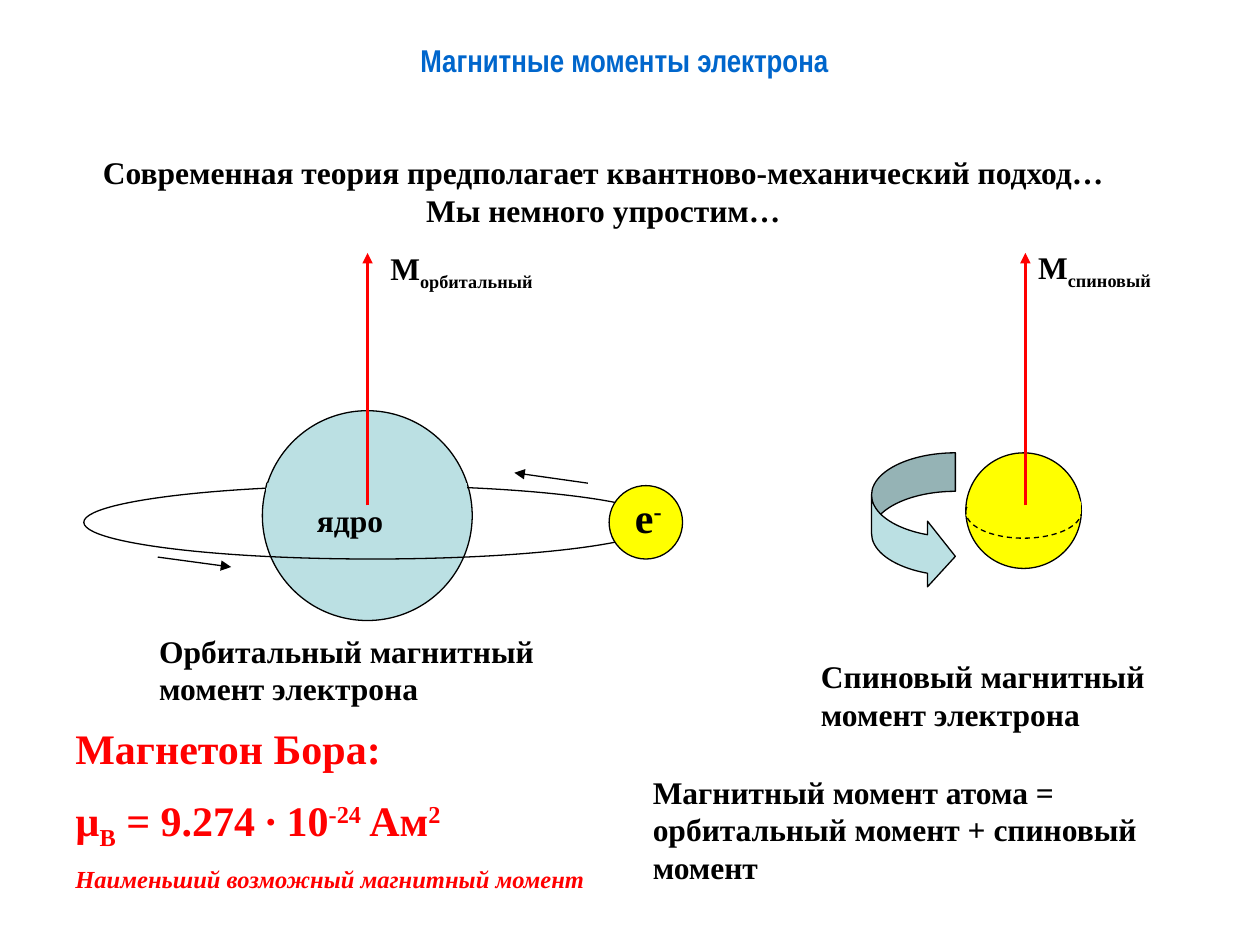
from dataclasses import dataclass
from functools import singledispatch

import pptx
import pptx.dml.color
import pptx.enum.dml
import pptx.enum.shapes
import pptx.enum.text
import pptx.oxml.ns
import pptx.oxml.xmlchemy
import pptx.util
from lxml import etree

Cm = pptx.util.Cm
Pt = pptx.util.Pt
SHAPE = pptx.enum.shapes.MSO_SHAPE
ALIGN = pptx.enum.text.PP_ALIGN
qn = pptx.oxml.ns.qn

BLACK, RED, BLUE = "000000", "FF0000", "0066CC"
YELLOW, PALE = "FFFF00", "BBE0E3"
SUB, SUP = -25, 30
THIN, THICK = 0.75, 1.5


@dataclass
class Run:
    text: str
    base: int = 0


@dataclass
class Para:
    runs: list[Run]
    size: float = 18
    italic: bool = False
    before: float = 0


@dataclass
class Label:
    box: tuple[float, float, float, float]
    paras: list[Para]
    color: str = BLACK
    font: str = "Times New Roman"
    align: ALIGN = ALIGN.LEFT


@dataclass
class Figure:
    box: tuple[float, float, float, float]
    fill: str | None = None
    kind: SHAPE = SHAPE.OVAL
    line: str = BLACK
    dashed: bool = False
    adj: tuple[float, ...] = ()


@dataclass
class Patch:
    points: list[tuple[float, float]]
    fill: str


@dataclass
class Line:
    start: tuple[float, float]
    end: tuple[float, float]
    color: str = BLACK
    width: float = THIN
    arrow: bool = True


def rgb(value: str) -> pptx.dml.color.RGBColor:
    return pptx.dml.color.RGBColor.from_string(value)


def plain(text: str, box: tuple[float, float, float, float], **style) -> Label:
    return Label(box, [Para([Run(text)])], **style)


def moment(name: str, left: float, top: float) -> Label:
    return Label((left, top, 3.81, 1.02), [Para([Run("M"), Run(name, SUB)])])


def axis(x: float) -> Line:
    return Line((x, 10.19), (x, 5.1), RED, THICK)


@singledispatch
def draw(item, s) -> None:
    raise TypeError(item)


@draw.register
def draw_label(item: Label, s) -> None:
    tf = s.shapes.add_textbox(*map(Cm, item.box)).text_frame
    tf.word_wrap = True
    for i, para in enumerate(item.paras):
        p = tf.paragraphs[0] if i == 0 else tf.add_paragraph()
        p.alignment = item.align
        if para.before:
            p.space_before = Pt(para.before)
        p.text = para.runs[0].text
        for run in para.runs[1:]:
            p.add_run().text = run.text
        for r, run in zip(p.runs, para.runs):
            r.font.name = item.font
            r.font.size = Pt(para.size)
            r.font.bold = True
            r.font.italic = para.italic
            r.font.color.rgb = rgb(item.color)
            if run.base:
                r.font._element.set("baseline", str(run.base * 1000))


@draw.register
def draw_figure(item: Figure, s) -> None:
    sp = s.shapes.add_shape(item.kind, *map(Cm, item.box))
    sp.shadow.inherit = False
    for i, value in enumerate(item.adj):
        sp.adjustments[i] = value
    if item.fill:
        sp.fill.solid()
        sp.fill.fore_color.rgb = rgb(item.fill)
    else:
        sp.fill.background()
    sp.line.color.rgb = rgb(item.line)
    sp.line.width = Pt(THIN)
    if item.dashed:
        sp.line.dash_style = pptx.enum.dml.MSO_LINE.DASH


@draw.register
def draw_patch(item: Patch, s) -> None:
    points = [(Cm(x), Cm(y)) for x, y in item.points]
    builder = s.shapes.build_freeform(*points[0])
    builder.add_line_segments(points[1:], close=True)
    sp = builder.convert_to_shape()
    sp.shadow.inherit = False
    sp.fill.solid()
    sp.fill.fore_color.rgb = rgb(item.fill)
    sp.line.fill.background()


@draw.register
def draw_line(item: Line, s) -> None:
    straight = pptx.enum.shapes.MSO_CONNECTOR.STRAIGHT
    ends = map(Cm, item.start + item.end)
    cxn = s.shapes.add_connector(straight, *ends)
    cxn.line.color.rgb = rgb(item.color)
    cxn.line.width = Pt(item.width)
    if item.arrow:
        etree.SubElement(cxn.line._get_or_add_ln(), qn("a:tailEnd"), type="triangle")
    etree.SubElement(cxn._element.spPr, qn("a:effectLst"))


ITEMS = [
    plain("Современная теория предполагает квантново-механический подход… "
          "Мы немного упростим…", (1.27, 2.97, 21.79, 1.8), align=ALIGN.CENTER),
    Figure((5.29, 8.28, 4.23, 4.23), PALE),
    Figure((1.69, 9.79, 11.64, 1.48)),
    Figure((12.28, 9.79, 1.48, 1.48), YELLOW),
    Label((12.55, 9.78, 1.7, 1.28), [Para([Run("e"), Run("-", SUP)], 24)]),
    plain("ядро", (6.14, 9.98, 3.18, 1.02)),
    plain("Oрбитальный магнитный момент электрона", (2.96, 12.61, 8.47, 1.8)),
    Figure((19.47, 9.13, 2.33, 2.33), YELLOW),
    moment("oрбитальный", 7.62, 4.9),
    Figure((17.57, 9.13, 1.69, 2.75), PALE, SHAPE.CURVED_RIGHT_ARROW,
           adj=(0.459, 0.784, 0.333)),
    Figure((19.47, 9.79, 2.33, 1.06), YELLOW, dashed=True),
    moment("спиновый", 20.68, 4.88),
    plain("Спиновый магнитный момент электрона", (16.3, 13.13, 8.47, 1.8)),
    Patch([(19.51, 10.36), (21.79, 10.36), (21.79, 10.13), (21.59, 9.7),
           (19.71, 9.7), (19.51, 10.13)], YELLOW),
    axis(20.67),
    Line((3.18, 11.23), (4.66, 11.43)),
    Line((11.85, 9.74), (10.37, 9.53)),
    Figure((5.38, 9.75, 4.02, 0.21), PALE, SHAPE.RECTANGLE, PALE),
    axis(7.41),
    Line((5.36, 9.83), (5.38, 9.73), arrow=False),
    Label((1.27, 14.45, 10.9, 4.75), [
        Para([Run("Магнетон Бора:")], 24),
        Para([Run("µ"), Run("B", SUB), Run(" = 9.274 ∙ 10"), Run("-24", SUP),
              Run(" Aм"), Run("2", SUP)], 24, before=12),
        Para([Run("Наименьший возможный магнитный момент")], 14, True, 7),
    ], RED),
    plain("Магнитный момент атома = орбитальный момент + спиновый момент",
          (12.91, 15.45, 11.43, 2.57)),
    plain("Магнитные моменты электрона", (1.3, 0.71, 22.58, 1.3),
          color=BLUE, font="Arial Narrow", align=ALIGN.CENTER),
]


def main() -> None:
    prs = pptx.Presentation()
    prs.slide_width, prs.slide_height = Cm(25.4), Cm(19.05)
    s = prs.slides.add_slide(prs.slide_layouts[6])
    for item in ITEMS:
        draw(item, s)
    prs.save("out.pptx")


if __name__ == "__main__":
    main()
